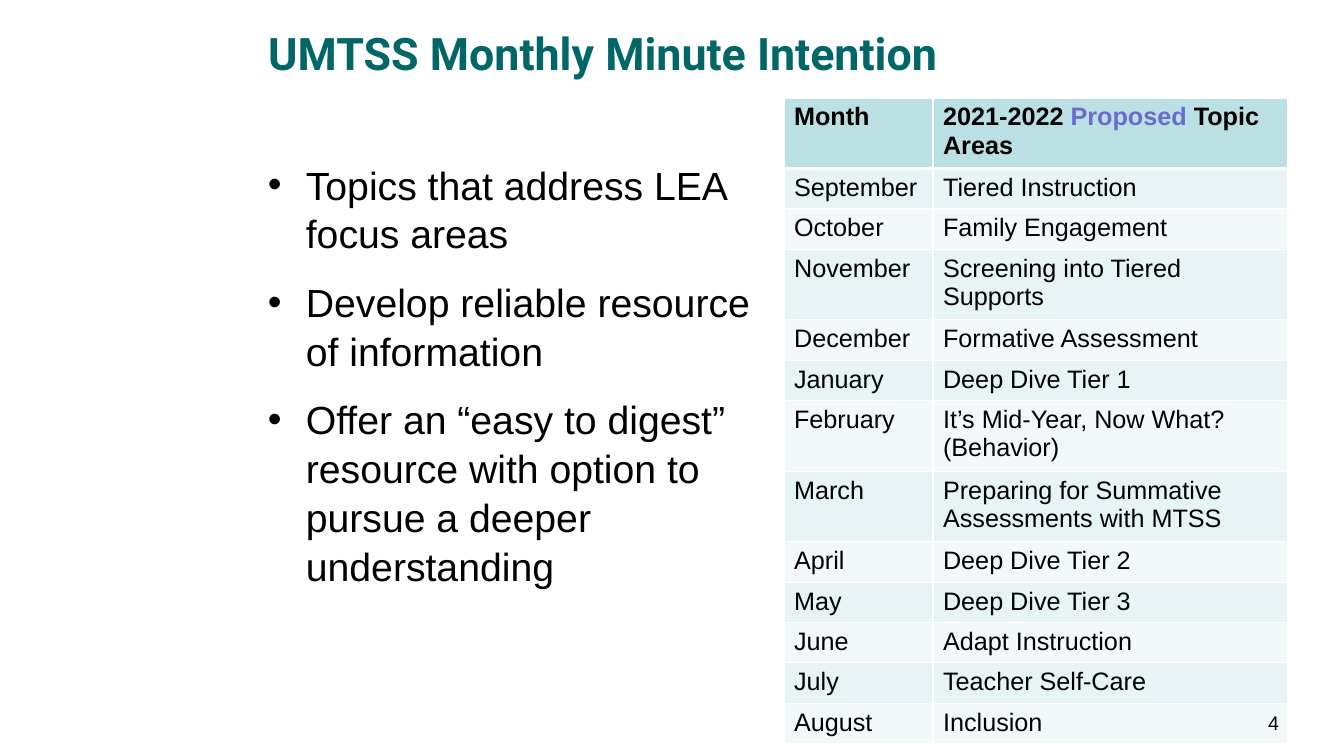
from typing import NamedTuple

from lxml.etree import SubElement
from pptx import Presentation
from pptx.dml.color import RGBColor
from pptx.enum.text import MSO_ANCHOR as Anchor, MSO_AUTO_SIZE as Fit, PP_ALIGN as Align
from pptx.oxml.ns import qn
from pptx.util import Emu, Pt

SCALE = 914400 / 100.8
COLORS = {"title": "006666", "text": "000000", "accent": "6B6BCF", "head": "BBE0E3",
          "odd": "E7F3F4", "even": "F3F9FA", "line": "FFFFFF"}


class Box(NamedTuple):
    left: int
    top: int
    width: int
    height: int


class Topic(NamedTuple):
    month: str
    name: str
    lines: int = 1


TITLE = Box(258, 6, 1030, 93)
POINTS = Box(258, 154, 504, 504)
TABLE = Box(784, 98, 504, 627)
NUMBER = Box(1087, 706, 202, 50)
COLS = (149, 355)
HEIGHTS = {1: 39, 2: 69}
INDENT = 38

GOALS = (
    "Topics that address LEA focus areas",
    "Develop reliable resource of information",
    "Offer an “easy to digest” resource with option to pursue a deeper understanding",
)
HEADER = (
    (("Month", "text"),),
    (("2021-2022 ", "text"), ("Proposed", "accent"), (" Topic Areas", "text")),
)
TOPICS = (
    Topic("September", "Tiered Instruction"),
    Topic("October", "Family Engagement"),
    Topic("November", "Screening into Tiered Supports", 2),
    Topic("December", "Formative Assessment"),
    Topic("January", "Deep Dive Tier 1"),
    Topic("February", "It’s Mid-Year, Now What? (Behavior)", 2),
    Topic("March", "Preparing for Summative Assessments with MTSS", 2),
    Topic("April", "Deep Dive Tier 2"),
    Topic("May", "Deep Dive Tier 3"),
    Topic("June", "Adapt Instruction"),
    Topic("July", "Teacher Self-Care"),
    Topic("August", "Inclusion"),
)


def px(n: float) -> Emu:
    return Emu(round(n * SCALE))


def place(box: Box) -> list[Emu]:
    return [px(n) for n in box]


def add_run(para, text: str, size: int, color: str = "text",
            bold: bool = False, face: str = "Arial") -> None:
    run = para.add_run()
    run.text = text
    font = run.font
    font.name, font.size, font.bold = face, Pt(size), bold
    font.color.rgb = RGBColor.from_string(COLORS[color])


def add_frame(slide, box: Box):
    frame = slide.shapes.add_textbox(*place(box)).text_frame
    frame.word_wrap = True
    return frame


def add_title(slide) -> None:
    title = slide.shapes.title
    title.left, title.top, title.width, title.height = place(TITLE)
    frame = title.text_frame
    frame.auto_size = Fit.NONE
    frame.vertical_anchor = Anchor.MIDDLE
    para = frame.paragraphs[0]
    para.alignment = Align.LEFT
    add_run(para, "UMTSS Monthly Minute Intention", 32, "title", True, "Roboto")


def add_goals(slide) -> None:
    frame = add_frame(slide, POINTS)
    for i, goal in enumerate(GOALS):
        para = frame.add_paragraph() if i else frame.paragraphs[0]
        props = para._p.get_or_add_pPr()
        props.set("marL", str(px(INDENT)))
        props.set("indent", str(-px(INDENT)))
        SubElement(props, qn("a:buFont"), typeface="Arial")
        SubElement(props, qn("a:buChar"), char="•")
        para.line_spacing = 1.04
        if i:
            para.space_before = Pt(14)
        add_run(para, goal, 28)


def set_edges(cell, top: int, bottom: int) -> None:
    """Draw the cell's borders, with the top and bottom widths in points."""
    props = cell._tc.get_or_add_tcPr()
    widths = {"lnL": 1, "lnR": 1, "lnT": top, "lnB": bottom}
    for i, (side, width) in enumerate(widths.items()):
        line = SubElement(props, qn(f"a:{side}"), w=str(Pt(width)))
        fill = SubElement(line, qn("a:solidFill"))
        SubElement(fill, qn("a:srgbClr"), val=COLORS["line"])
        props.insert(i, line)


def add_topics(slide) -> None:
    rows = [HEADER] + [(((t.month, "text"),), ((t.name, "text"),)) for t in TOPICS]
    lines = [2] + [t.lines for t in TOPICS]
    table = slide.shapes.add_table(len(rows), len(COLS), *place(TABLE)).table
    for col, width in zip(table.columns, COLS):
        col.width = px(width)
    for r, row in enumerate(rows):
        table.rows[r].height = px(HEIGHTS[lines[r]])
        shade = "head" if r == 0 else "odd" if r % 2 else "even"
        for c, runs in enumerate(row):
            cell = table.cell(r, c)
            cell.fill.solid()
            cell.fill.fore_color.rgb = RGBColor.from_string(COLORS[shade])
            set_edges(cell, 3 if r == 1 else 1, 3 if r == 0 else 1)
            for text, color in runs:
                add_run(cell.text_frame.paragraphs[0], text, 18, color, r == 0)


def add_number(slide) -> None:
    para = add_frame(slide, NUMBER).paragraphs[0]
    para.alignment = Align.RIGHT
    para.space_after = Pt(6)
    add_run(para, "4", 14)


def main() -> None:
    deck = Presentation()
    deck.slide_width, deck.slide_height = px(1344), px(756)
    slide = deck.slides.add_slide(deck.slide_layouts.get_by_name("Title Only"))
    add_title(slide)
    add_goals(slide)
    add_topics(slide)
    add_number(slide)
    deck.save("out.pptx")


if __name__ == "__main__":
    main()
